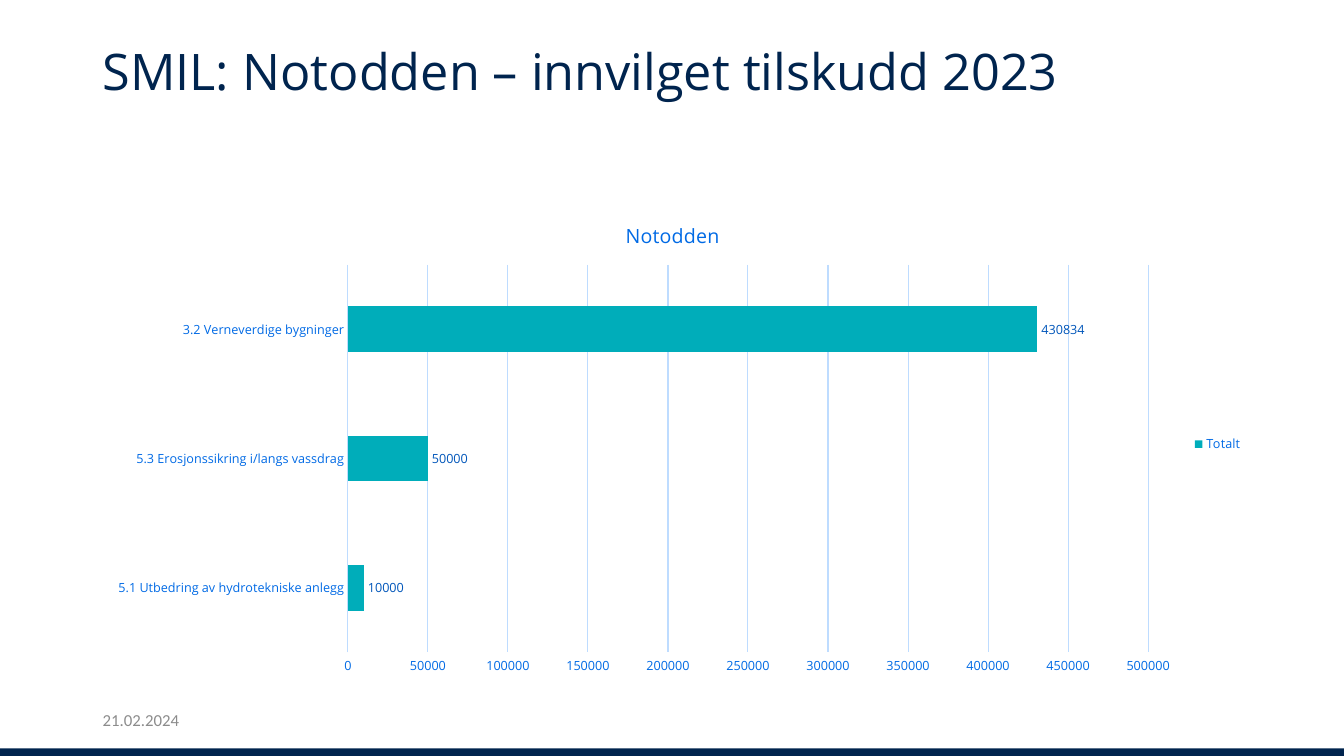
from dataclasses import dataclass

from lxml.etree import SubElement
from pptx import Presentation
from pptx.chart.data import CategoryChartData
from pptx.dml.color import RGBColor
from pptx.enum.chart import XL_CHART_TYPE, XL_LABEL_POSITION, XL_LEGEND_POSITION, XL_TICK_MARK
from pptx.enum.shapes import MSO_SHAPE
from pptx.enum.text import MSO_ANCHOR
from pptx.oxml.ns import qn
from pptx.util import Inches, Pt


@dataclass(frozen=True)
class Theme:
    navy: str = "00244E"
    teal: str = "00ADBA"
    blue: str = "006AE5"
    value_blue: str = "0056BA"
    grid_blue: str = "BEDCFF"
    grey: str = "8C8C8C"
    heading_font: str = "Open Sans"
    date_font: str = "Calibri"
    heading_size: float = 36
    chart_title_size: float = 14
    chart_size: float = 10
    label_size: float = 9
    date_size: float = 12
    grid_width: float = 0.75


THEME = Theme()
SLIDE_WIDTH, SLIDE_HEIGHT = Inches(13.33), Inches(7.5)
MARGIN = 0.069  # share of the slide's width

GRANTS = {
    "5.1 Utbedring av hydrotekniske anlegg": 10000,
    "5.3 Erosjonssikring i/langs vassdrag": 50000,
    "3.2 Verneverdige bygninger": 430834,
}


def slide_box(left, top, width, height):
    """Turn shares of the slide's size into lengths."""
    return (round(left * SLIDE_WIDTH), round(top * SLIDE_HEIGHT),
            round(width * SLIDE_WIDTH), round(height * SLIDE_HEIGHT))


def style_font(font, size, color, name=THEME.heading_font):
    font.size = Pt(size)
    font.bold = False
    font.name = name
    font.color.rgb = RGBColor.from_string(color)


def style_line(line):
    line.color.rgb = RGBColor.from_string(THEME.grid_blue)
    line.width = Pt(THEME.grid_width)


def add_text(slide, box, text, size, color, font_name, anchor, line_spacing=1.0):
    frame = slide.shapes.add_textbox(*box).text_frame
    frame.word_wrap = True
    frame.vertical_anchor = anchor
    frame.text = text
    paragraph = frame.paragraphs[0]
    paragraph.line_spacing = line_spacing
    style_font(paragraph.runs[0].font, size, color, font_name)


def add_footer_band(slide, box):
    band = slide.shapes.add_shape(MSO_SHAPE.RECTANGLE, *box)
    band.shadow.inherit = False
    band.fill.solid()
    band.fill.fore_color.rgb = RGBColor.from_string(THEME.navy)
    band.line.fill.background()


def place_plot(chart, **shares):
    """Fix the inner plot area as shares of the chart's size."""
    plot_area = chart._chartSpace.chart.plotArea
    for old_layout in plot_area.findall(qn("c:layout")):
        plot_area.remove(old_layout)
    layout = SubElement(plot_area, qn("c:layout"))
    plot_area.insert(0, layout)
    manual = SubElement(layout, qn("c:manualLayout"))
    settings = {"layoutTarget": "inner", "xMode": "edge", "yMode": "edge", **shares}
    for tag, value in settings.items():
        SubElement(manual, qn(f"c:{tag}")).set("val", str(value))


def style_axes(chart):
    for axis in (chart.category_axis, chart.value_axis):
        axis.major_tick_mark = axis.minor_tick_mark = XL_TICK_MARK.NONE
        style_font(axis.tick_labels.font, THEME.label_size, THEME.blue)
    chart.category_axis.has_major_gridlines = False
    style_line(chart.category_axis.format.line)

    amounts = chart.value_axis
    amounts.minimum_scale, amounts.maximum_scale, amounts.major_unit = 0, 500000, 50000
    amounts.has_major_gridlines = True
    style_line(amounts.major_gridlines.format.line)
    amounts.format.line.fill.background()


def add_grant_chart(slide, box):
    grant_data = CategoryChartData(number_format="General")
    grant_data.categories = list(GRANTS)
    grant_data.add_series("Totalt", list(GRANTS.values()))
    chart = slide.shapes.add_chart(XL_CHART_TYPE.BAR_CLUSTERED, *box, grant_data).chart
    style_font(chart.font, THEME.chart_size, THEME.navy)

    chart.has_title = True
    chart.chart_title.text_frame.text = "Notodden"
    municipality = chart.chart_title.text_frame.paragraphs[0].runs[0]
    style_font(municipality.font, THEME.chart_title_size, THEME.blue)
    chart.chart_title.include_in_layout = False

    chart.has_legend = True
    chart.legend.position = XL_LEGEND_POSITION.RIGHT
    chart.legend.include_in_layout = False
    style_font(chart.legend.font, THEME.label_size, THEME.blue)

    style_axes(chart)
    place_plot(chart, x=0.22, y=0.13, w=0.69, h=0.8)

    bars = chart.plots[0]
    bars.gap_width = 182
    bars.vary_by_categories = False
    total = bars.series[0]
    total.invert_if_negative = False
    total.format.fill.solid()
    total.format.fill.fore_color.rgb = RGBColor.from_string(THEME.teal)
    amount_labels = total.data_labels
    amount_labels.show_value = True
    amount_labels.position = XL_LABEL_POSITION.OUTSIDE_END
    style_font(amount_labels.font, THEME.label_size, THEME.value_blue)


def build_chart_slide(presentation):
    slide = presentation.slides.add_slide(presentation.slide_layouts[6])
    add_footer_band(slide, slide_box(0, 0.99, 1, 0.01))
    add_text(slide, slide_box(MARGIN, 0.055, 0.852, 0.19),
             "SMIL: Notodden – innvilget tilskudd 2023", THEME.heading_size,
             THEME.navy, THEME.heading_font, MSO_ANCHOR.TOP, line_spacing=0.9)
    add_text(slide, slide_box(MARGIN, 0.926, 0.225, 0.053), "21.02.2024",
             THEME.date_size, THEME.grey, THEME.date_font, MSO_ANCHOR.MIDDLE)
    add_grant_chart(slide, slide_box(MARGIN, 0.267, 0.863, 0.641))


def main():
    presentation = Presentation()
    presentation.slide_width, presentation.slide_height = SLIDE_WIDTH, SLIDE_HEIGHT
    build_chart_slide(presentation)
    presentation.save("out.pptx")


if __name__ == "__main__":
    main()
